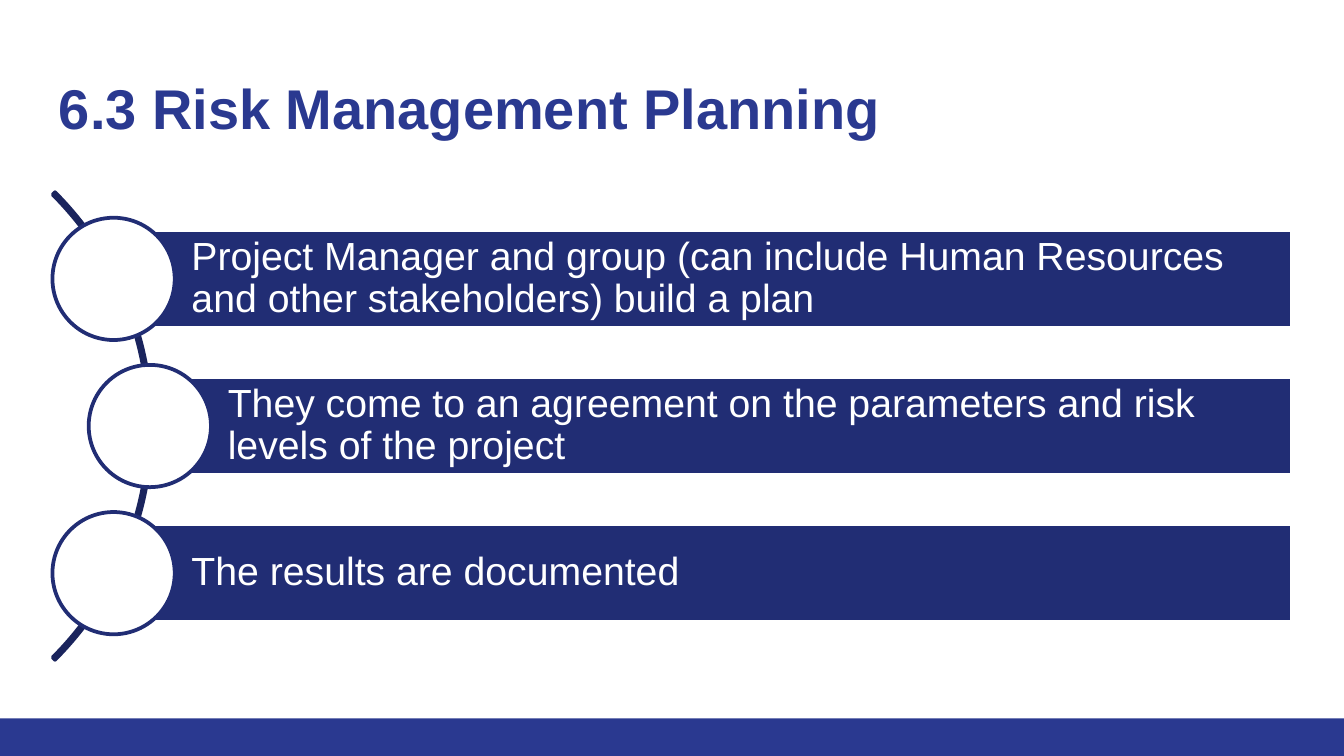
import pptx
import pptx.dml.color
import pptx.enum.shapes
import pptx.enum.text
import pptx.util

Inches = pptx.util.Inches
Pt = pptx.util.Pt
RGBColor = pptx.dml.color.RGBColor
Shape = pptx.enum.shapes.MSO_SHAPE
Anchor = pptx.enum.text.MSO_ANCHOR

BLUE = RGBColor(0x2A, 0x39, 0x90)
NAVY = RGBColor(0x21, 0x2D, 0x74)
DARK_NAVY = RGBColor(0x1A, 0x24, 0x5D)
WHITE = RGBColor(0xFF, 0xFF, 0xFF)

WIDTH = 10
HEIGHT = WIDTH * 9 / 16

STEPS = [
    "Project Manager and group (can include Human Resources and other stakeholders) build a plan",
    "They come to an agreement on the parameters and risk levels of the project",
    "The results are documented",
]


def add_shape(page, kind, left, top, width, height, fill=None, line=None):
    """Add a preset shape without shadow, with optional fill and outline."""
    shape = page.shapes.add_shape(
        kind, Inches(left), Inches(top), Inches(width), Inches(height))
    shape.shadow.inherit = False
    if fill is None:
        shape.fill.background()
    else:
        shape.fill.solid()
        shape.fill.fore_color.rgb = fill
    if line is None:
        shape.line.fill.background()
    else:
        shape.line.color.rgb = line
        shape.line.width = Pt(2)
    return shape


def write_text(box, text, size, color, bold=False, anchor=Anchor.TOP,
               insets=(0.1, 0.1, 0.1, 0.1), spacing=None):
    """Write one left-aligned paragraph into a shape or text box."""
    frame = box.text_frame
    frame.word_wrap = True
    frame.vertical_anchor = anchor
    (frame.margin_left, frame.margin_top,
     frame.margin_right, frame.margin_bottom) = map(Inches, insets)
    para = frame.paragraphs[0]
    para.alignment = pptx.enum.text.PP_ALIGN.LEFT
    para.line_spacing = spacing
    span = para.add_run()
    span.text = text
    span.font.name = "Arial"
    span.font.size = Pt(size)
    span.font.bold = bold
    span.font.color.rgb = color


def add_footer(page, left, top, width, height):
    """Place the coloured band at the foot of the slide."""
    add_shape(page, Shape.RECTANGLE, left, top, width, height, BLUE)


def add_title(page, left, top, width, height):
    """Place the slide title."""
    box = page.shapes.add_textbox(
        Inches(left), Inches(top), Inches(width), Inches(height))
    write_text(box, "6.3 Risk Management Planning", 30, BLUE, bold=True)


def add_step_list(page, left, top, width, height):
    """Place the arc and the steps strung along it, bulging to the right."""
    arc_size, circle, bar_height, bulge = 4.92, 0.91, 0.73, 0.27
    pitch = (height - circle) / (len(STEPS) - 1)
    arc = add_shape(page, Shape.BLOCK_ARC, left - 4.18,
                    top + (height - arc_size) / 2, arc_size, arc_size,
                    line=DARK_NAVY)
    for index, value in enumerate((189, 27, 0.005)):
        arc.adjustments[index] = value
    for index, text in enumerate(STEPS):
        circle_left = left + bulge * (index % 2)
        circle_top = top + index * pitch
        bar_left = circle_left + circle / 2
        bar = add_shape(page, Shape.RECTANGLE, bar_left,
                        circle_top + (circle - bar_height) / 2,
                        left + width - bar_left, bar_height, NAVY, WHITE)
        write_text(bar, text, 21, WHITE, anchor=Anchor.MIDDLE,
                   insets=(0.58, 0.06, 0.06, 0.06), spacing=0.9)
        add_shape(page, Shape.OVAL, circle_left, circle_top, circle, circle,
                  WHITE, NAVY)


def main():
    """Build and save the deck."""
    deck = pptx.Presentation()
    deck.slide_width = Inches(WIDTH)
    deck.slide_height = Inches(HEIGHT)
    page = deck.slides.add_slide(deck.slide_layouts[6])
    add_footer(page, 0, HEIGHT - 0.28, WIDTH, 0.28)
    add_title(page, 0.34, 0.45, 9.32, 0.66)
    add_step_list(page, 0.39, 1.62, 9.22, 3.1)
    deck.save("out.pptx")


if __name__ == "__main__":
    main()
